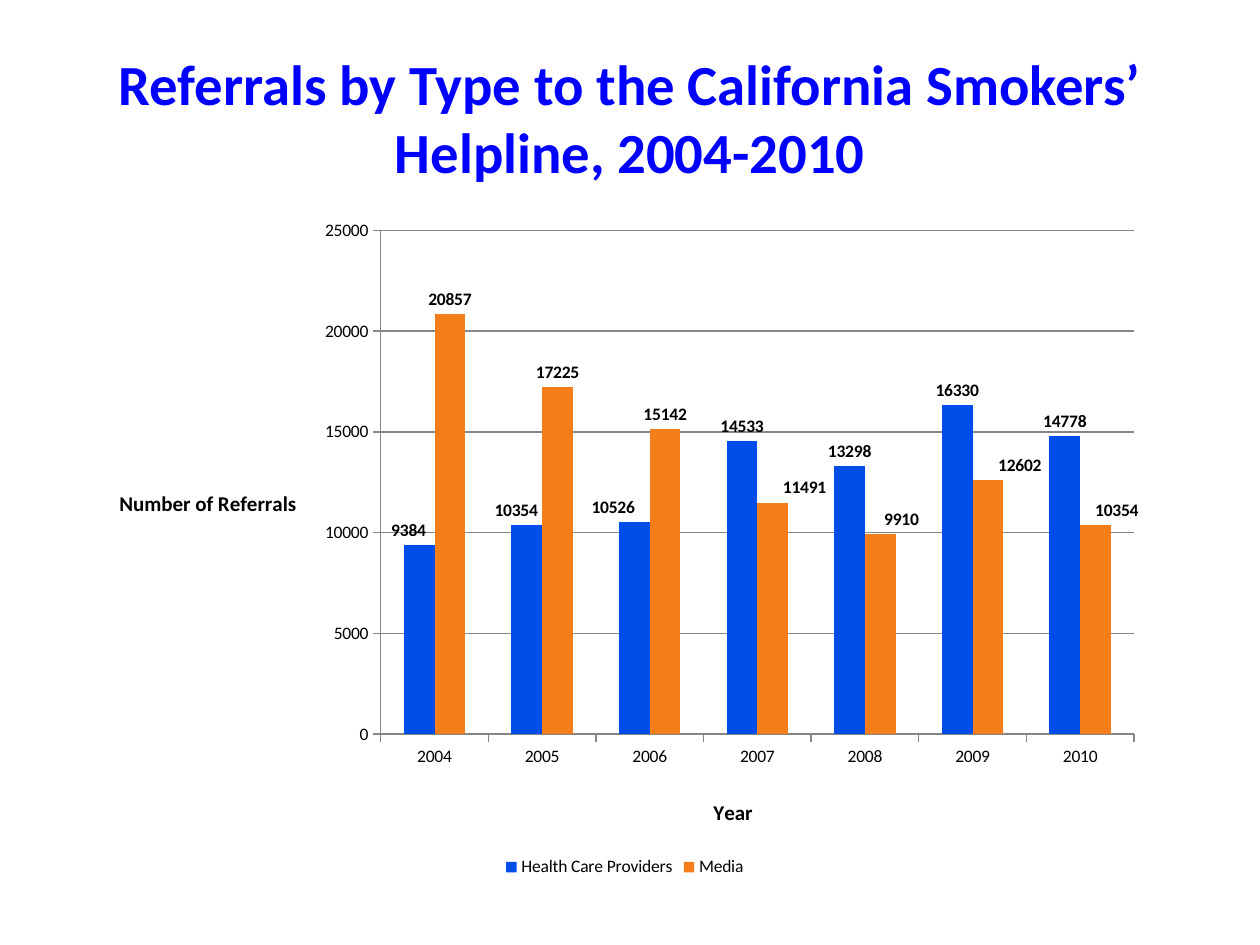
from lxml import etree
from pptx import Presentation
from pptx import util as u
from pptx.chart.data import CategoryChartData
from pptx.dml.color import RGBColor
from pptx.enum import chart as charts, text
from pptx.oxml.ns import qn

TITLE_BLUE = RGBColor(0x00, 0x00, 0xFF)
PROVIDER_BLUE = RGBColor(0x00, 0x4E, 0xEA)
MEDIA_ORANGE = RGBColor(0xF5, 0x7E, 0x1B)
BLACK = RGBColor(0x00, 0x00, 0x00)
GRID_GRAY = RGBColor(0x86, 0x86, 0x86)
FONT = "Calibri"

YEARS = [str(year) for year in range(2004, 2011)]
REFERRALS = {
    "Health Care Providers": {
        "values": [9384, 10354, 10526, 14533, 13298, 16330, 14778],
        "color": PROVIDER_BLUE,
        "label_shifts": {0: -0.01, 1: -0.01, 2: -0.02},
    },
    "Media": {
        "values": [20857, 17225, 15142, 11491, 9910, 12602, 10354],
        "color": MEDIA_ORANGE,
        "label_shifts": {3: 0.03, 4: 0.02, 5: 0.03, 6: 0.02},
    },
}


def apply_format(target, values):
    """Set each named attribute of the target."""
    for name, value in values.items():
        setattr(target, name, value)


def style_font(font, size, bold, color=BLACK):
    """Give a font its typeface, size, weight and colour."""
    apply_format(font, {"name": FONT, "size": u.Pt(size), "bold": bold})
    font.color.rgb = color


def set_layout(element, index, **values):
    """Place a chart element by fractions of the chart, as child number index."""
    for old in element.findall(qn("c:layout")):
        element.remove(old)
    layout = etree.Element(qn("c:layout"))
    manual = etree.SubElement(layout, qn("c:manualLayout"))
    for name, value in values.items():
        etree.SubElement(manual, qn("c:" + name)).set("val", str(value))
    element.insert(index, layout)


def add_title(page, left, top, width, height):
    """Fill the title placeholder within the given box."""
    title = page.shapes.title
    apply_format(title, {"left": left, "top": top, "width": width, "height": height})
    frame = title.text_frame
    apply_format(frame, {
        "word_wrap": True,
        "auto_size": text.MSO_AUTO_SIZE.NONE,
        "vertical_anchor": text.MSO_ANCHOR.MIDDLE,
    })
    para = frame.paragraphs[0]
    para.alignment = text.PP_ALIGN.CENTER
    span = para.add_run()
    span.text = "Referrals by Type to the California Smokers’ Helpline, 2004-2010"
    style_font(span.font, 32.4, True, TITLE_BLUE)


def style_axis(axis, title, x, y):
    """Format an axis and put its horizontal title at a chart fraction."""
    apply_format(axis, {
        "major_tick_mark": charts.XL_TICK_MARK.OUTSIDE,
        "minor_tick_mark": charts.XL_TICK_MARK.NONE,
    })
    style_font(axis.tick_labels.font, 10, False)
    axis.format.line.color.rgb = GRID_GRAY
    frame = axis.axis_title.text_frame
    span = frame.paragraphs[0].add_run()
    span.text = title
    style_font(span.font, 12, True)
    apply_format(frame, {"word_wrap": True})
    body = axis.axis_title._element.find(".//" + qn("a:bodyPr"))
    body.set("rot", "0")
    body.set("vert", "horz")
    set_layout(axis.axis_title._element, 1, xMode="edge", yMode="edge", x=x, y=y)


def style_series(series, color, label_shifts):
    """Colour a series and label its columns, moving some labels sideways."""
    series.format.fill.solid()
    series.format.fill.fore_color.rgb = color
    series.invert_if_negative = False
    labels = series.data_labels
    apply_format(labels, {
        "show_value": True,
        "position": charts.XL_LABEL_POSITION.OUTSIDE_END,
    })
    style_font(labels.font, 10, True)
    for index, shift in label_shifts.items():
        label = series.points[index].data_label
        style_font(label.font, 10, True)
        label.position = charts.XL_LABEL_POSITION.OUTSIDE_END
        element = labels._element.find(f"{qn('c:dLbl')}[{len(labels._element.findall(qn('c:dLbl')))}]")
        set_layout(element, 1, x=shift, y=0)


def add_referral_chart(page, left, top, width, height):
    """Draw the clustered columns of referrals per year in the given box."""
    data = CategoryChartData()
    data.categories = YEARS
    for name, group in REFERRALS.items():
        data.add_series(name, group["values"])
    chart = page.shapes.add_chart(
        charts.XL_CHART_TYPE.COLUMN_CLUSTERED, left, top, width, height, data
    ).chart
    style_font(chart.font, 10, False)
    apply_format(chart, {"has_title": False, "has_legend": True})
    apply_format(chart.legend, {
        "position": charts.XL_LEGEND_POSITION.BOTTOM,
        "include_in_layout": False,
    })
    style_font(chart.legend.font, 10, False)

    plot = chart.plots[0]
    apply_format(plot, {"gap_width": 150, "overlap": 0, "vary_by_categories": False})
    for series in plot.series:
        group = REFERRALS[series.name]
        style_series(series, group["color"], group["label_shifts"])

    style_axis(chart.category_axis, "Year", 0.58, 0.87)
    style_axis(chart.value_axis, "Number of Referrals", 0.02, 0.41)
    apply_format(chart.value_axis, {
        "minimum_scale": 0,
        "maximum_scale": 25000,
        "major_unit": 5000,
        "has_major_gridlines": True,
    })
    chart.value_axis.major_gridlines.format.line.color.rgb = GRID_GRAY
    plot_area = chart._chartSpace.find(".//" + qn("c:plotArea"))
    set_layout(plot_area, 0, layoutTarget="inner", xMode="edge", yMode="edge",
               x=0.27, y=0.03, w=0.71, h=0.75)


def main():
    """Build the slide and save it."""
    deck = Presentation()
    apply_format(deck, {"slide_width": u.Cm(25.4), "slide_height": u.Cm(19.05)})
    page = deck.slides.add_slide(deck.slide_layouts.get_by_name("Title Only"))
    add_title(page, u.Cm(1.27), u.Cm(0.76), u.Cm(22.86), u.Cm(3.18))
    add_referral_chart(page, u.Cm(1.9), u.Cm(4.24), u.Cm(21.39), u.Cm(13.54))
    deck.save("out.pptx")


if __name__ == "__main__":
    main()
